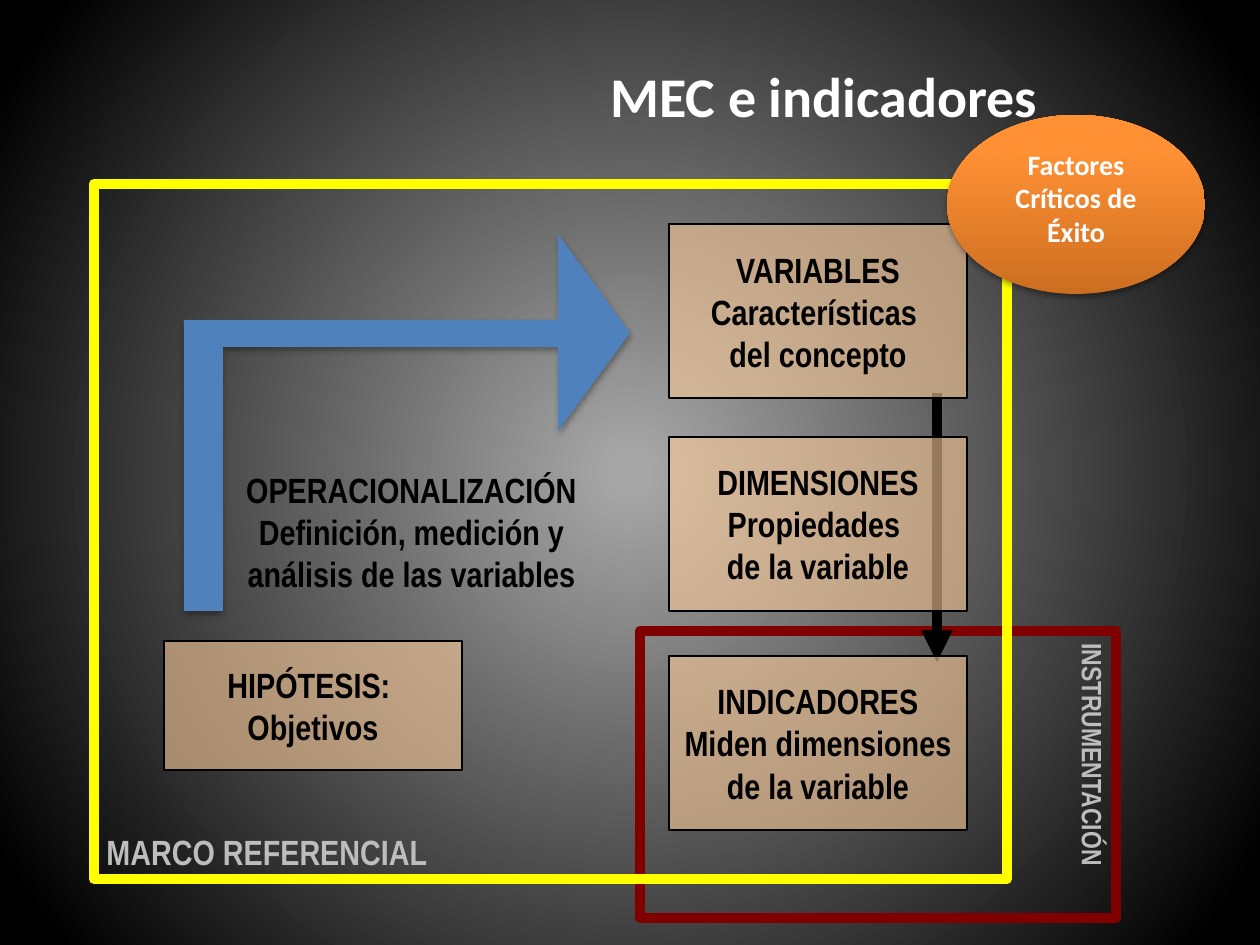
from lxml import etree
from pptx import Presentation
from pptx.dml.color import RGBColor
from pptx.enum.shapes import MSO_CONNECTOR, MSO_SHAPE
from pptx.enum.text import MSO_ANCHOR, PP_ALIGN
from pptx.oxml.ns import qn
from pptx.util import Emu, Pt

RECTANGLE, OVAL = MSO_SHAPE.RECTANGLE, MSO_SHAPE.OVAL
STRAIGHT = MSO_CONNECTOR.STRAIGHT
TOP, MIDDLE, BOTTOM = MSO_ANCHOR.TOP, MSO_ANCHOR.MIDDLE, MSO_ANCHOR.BOTTOM
LEFT, CENTER = PP_ALIGN.LEFT, PP_ALIGN.CENTER

PX = 914400 / 126
NARROW, TITLE_FONT = "Arial Narrow", "Calibri"
BLACK, WHITE, GREY = "000000", "FFFFFF", "BDBDBD"
TAN, BLUE, YELLOW, MAROON = "FFCC99", "4F81BD", "FFFF00", "800000"
BACKDROP = [(2, "A6A6A6"), (94, BLACK)]
ORANGE = [(0, "CC6E20"), (80, "FF9034"), (100, "FF9136")]

TITLE = "MEC e indicadores"
FACTORS = "Factores Críticos de Éxito"
INSTRUMENTS = "INSTRUMENTACIÓN"
FRAMEWORK = "MARCO REFERENCIAL"
OPERATIONS = ["OPERACIONALIZACIÓN", "Definición, medición y", "análisis de las variables"]
CONCEPTS = [
    (164, 641, 129, ["HIPÓTESIS: ", "Objetivos"]),
    (669, 224, 174, ["VARIABLES", "Características ", "del concepto"]),
    (669, 437, 174, ["DIMENSIONES", "Propiedades ", "de la variable"]),
    (669, 656, 174, ["INDICADORES", "Miden dimensiones", "de la variable"]),
]
CONCEPT_WIDTH = 298
BENT_ARROW = [(630, 333), (558, 431), (558, 347), (223, 347), (223, 611),
              (184, 611), (184, 320), (558, 320), (558, 234)]


def px(*lengths):
    return [Emu(round(length * PX)) for length in lengths]


def color(code):
    return RGBColor.from_string(code)


def add_child(parent, tag, **attributes):
    return etree.SubElement(parent, qn(tag), {k: str(v) for k, v in attributes.items()})


def set_gradient(fill, owner, stops, radial=False):
    fill.gradient()
    gradient = next(owner.iter(qn("a:gradFill")))
    for child in list(gradient):
        gradient.remove(child)
    stop_list = add_child(gradient, "a:gsLst")
    for position, code in stops:
        add_child(add_child(stop_list, "a:gs", pos=position * 1000), "a:srgbClr", val=code)
    if radial:
        center = add_child(gradient, "a:path", path="circle")
        add_child(center, "a:fillToRect", l=50000, t=50000, r=50000, b=50000)
    else:
        add_child(gradient, "a:lin", ang=270 * 60000, scaled=0)


def set_shadow(shape, alpha, blur, distance):
    shape.shadow.inherit = False
    effects = next(shape.element.iter(qn("a:effectLst")))
    outer = add_child(effects, "a:outerShdw", blurRad=Pt(blur), dist=Pt(distance),
                      dir=90 * 60000, rotWithShape=0)
    add_child(add_child(outer, "a:srgbClr", val=BLACK), "a:alpha", val=alpha * 1000)


def write(shape, lines, size=20, font=NARROW, ink=BLACK, align=CENTER,
          anchor=TOP, wrap=False, vertical=None):
    frame = shape.text_frame
    frame.word_wrap = wrap
    frame.vertical_anchor = anchor
    if vertical:
        next(frame._txBody.iter(qn("a:bodyPr"))).set("vert", vertical)
    for index, line in enumerate(lines):
        paragraph = frame.add_paragraph() if index else frame.paragraphs[0]
        paragraph.alignment = align
        run = paragraph.add_run()
        run.text = line
        run.font.size = Pt(size)
        run.font.name = font
        run.font.bold = True
        run.font.color.rgb = color(ink)


def add_box(shapes, bounds, line, width, fill=None, alpha=100):
    box = shapes.add_shape(RECTANGLE, *px(*bounds))
    box.shadow.inherit = False
    box.line.color.rgb = color(line)
    box.line.width = Pt(width)
    if fill:
        box.fill.solid()
        box.fill.fore_color.rgb = color(fill)
        tint = next(box.element.iter(qn("a:srgbClr")))
        add_child(tint, "a:alpha", val=alpha * 1000)
    else:
        box.fill.background()
    return box


def add_down_arrow(shapes):
    arrow = shapes.add_connector(STRAIGHT, *px(937, 393, 937, 662))
    arrow.line.color.rgb = color(BLACK)
    arrow.line.width = Pt(6)
    add_child(next(arrow.element.iter(qn("a:ln"))), "a:tailEnd", type="triangle")
    add_child(next(arrow.element.iter(qn("p:spPr"))), "a:effectLst")


def add_bent_arrow(shapes):
    corners = [px(*point) for point in BENT_ARROW]
    builder = shapes.build_freeform(*corners[0])
    builder.add_line_segments(corners[1:], close=True)
    arrow = builder.convert_to_shape()
    arrow.fill.solid()
    arrow.fill.fore_color.rgb = color(BLUE)
    arrow.line.fill.background()
    set_shadow(arrow, 32, 3.5, 2.2)


def main():
    deck = Presentation()
    deck.slide_width, deck.slide_height = px(1260, 945)
    slide = deck.slides.add_slide(deck.slide_layouts[6])
    shapes = slide.shapes
    set_gradient(slide.background.fill, slide.element, BACKDROP, radial=True)

    instruments = add_box(shapes, (640, 631, 476, 287), MAROON, 6)
    write(instruments, [INSTRUMENTS], size=16, ink=GREY, vertical="eaVert")
    add_down_arrow(shapes)
    framework = add_box(shapes, (94, 184, 913, 695), YELLOW, 6)
    write(framework, [FRAMEWORK], ink=GREY, align=LEFT, anchor=BOTTOM)

    for left, top, height, lines in CONCEPTS:
        concept = add_box(shapes, (left, top, CONCEPT_WIDTH, height), BLACK, 0.75, TAN, 59)
        write(concept, lines, anchor=MIDDLE)

    add_bent_arrow(shapes)
    write(shapes.add_textbox(*px(232, 462, 359, 140)), OPERATIONS)
    write(shapes.add_textbox(*px(432, 48, 784, 95)), [TITLE], size=32,
          font=TITLE_FONT, ink=WHITE, anchor=MIDDLE, wrap=True)

    factors = shapes.add_shape(OVAL, *px(947, 115, 258, 179))
    set_gradient(factors.fill, factors.element, ORANGE)
    factors.line.fill.background()
    set_shadow(factors, 35, 3.1, 1.8)
    write(factors, [FACTORS], size=16, font=TITLE_FONT, ink=WHITE, wrap=True)

    deck.save("out.pptx")


if __name__ == "__main__":
    main()
